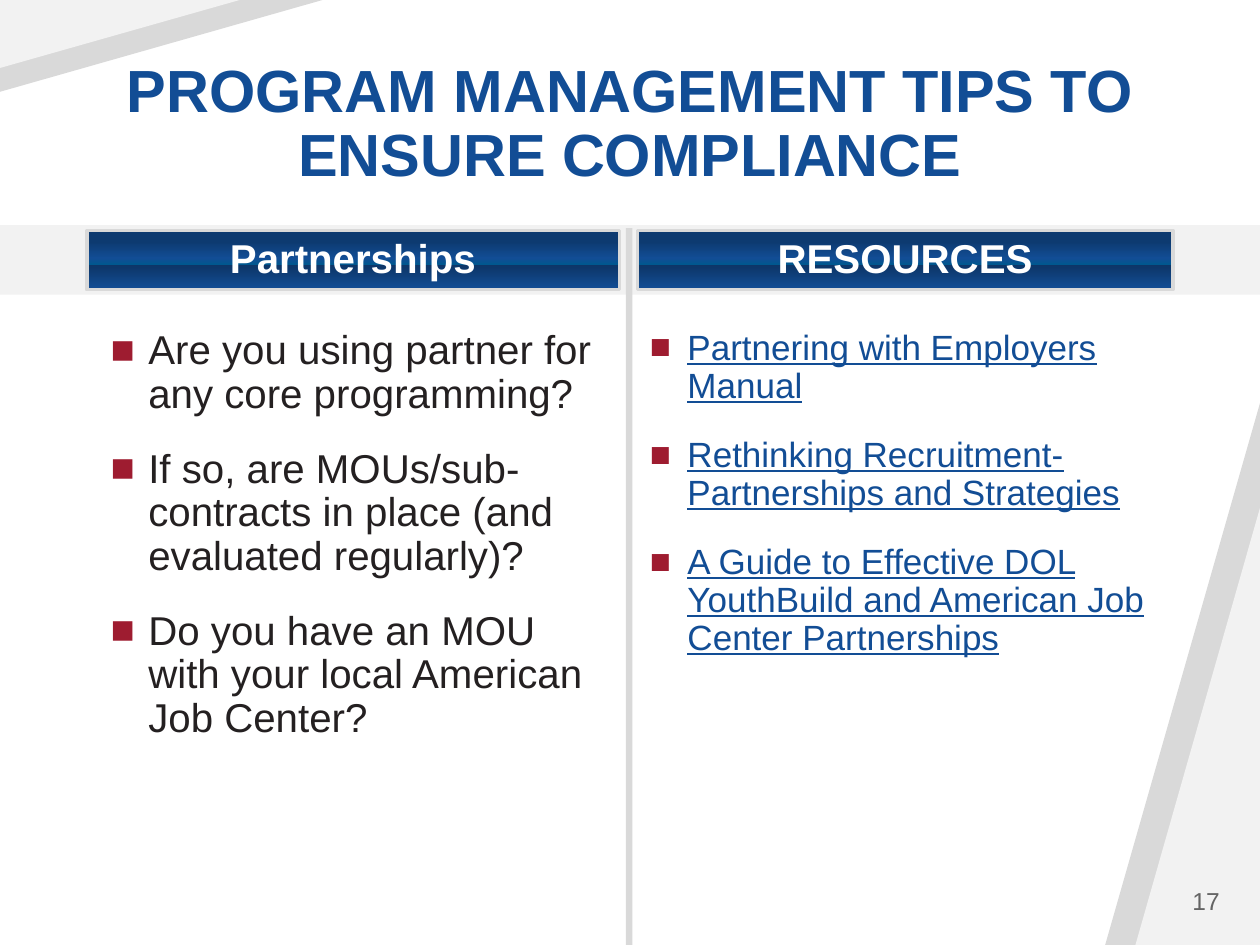
from dataclasses import dataclass

from lxml import etree
from pptx import Presentation
from pptx import util as u
from pptx.dml import color
from pptx.enum import shapes, text
from pptx.oxml import ns


@dataclass(frozen=True)
class Theme:
    """Colours, font and type sizes of the slide."""
    font: str = "Arial"
    pale: str = "F2F2F2"
    grey: str = "D9D9D9"
    white: str = "FFFFFF"
    ink: str = "242021"
    blue: str = "124D95"
    red: str = "9E1C30"
    number: str = "646464"
    bar: tuple = ((19, "0D3A70"), (47, "124D95"), (58, "00588F"),
                  (59, "0D3668"), (100, "124D95"))
    title_pt: int = 34
    body_pt: int = 23
    link_pt: int = 20
    number_pt: int = 14


T = Theme()
QUESTIONS = [
    "Are you using partner for any core programming?",
    "If so, are MOUs/sub-contracts in place (and evaluated regularly)?",
    "Do you have an MOU with your local American Job Center?",
]
RESOURCES = [
    "Partnering with Employers Manual",
    "Rethinking Recruitment- Partnerships and Strategies",
    "A Guide to Effective DOL YouthBuild and American Job Center Partnerships",
]


def rgb(value):
    """Turn a hex string into a colour."""
    return color.RGBColor.from_string(value)


def box(at):
    """Turn left, top, width and height in centimetres into lengths."""
    return [u.Cm(v) for v in at]


def apply_gradient(fill, element):
    """Give a fill the vertical bar gradient inside its owner element."""
    fill.gradient()
    fill.gradient_angle = 270
    stops = element.find(".//" + ns.qn("a:gsLst"))
    for old in list(stops):
        stops.remove(old)
    for pos, value in T.bar:
        gs = etree.SubElement(stops, ns.qn("a:gs"), pos=str(pos * 1000))
        etree.SubElement(gs, ns.qn("a:srgbClr"), val=value)


def add_block(s, kind, at, fill=None):
    """Add a borderless preset shape with an optional solid fill."""
    sp = s.shapes.add_shape(kind, *box(at))
    sp.shadow.inherit = False
    sp.line.fill.background()
    if fill:
        sp.fill.solid()
        sp.fill.fore_color.rgb = rgb(fill)
    return sp


def add_corner(s, at, fill, rotation=0):
    """Add a right-angled corner triangle."""
    sp = add_block(s, shapes.MSO_SHAPE.ISOSCELES_TRIANGLE, at, fill)
    sp.adjustments[0] = 1
    sp.rotation = rotation


def add_run(p, words, size, fill=None, bold=False, underline=False):
    """Add a styled run to a paragraph."""
    r = p.add_run()
    r.text = words
    r.font.name, r.font.size = T.font, u.Pt(size)
    r.font.bold, r.font.underline = bold, underline
    if fill:
        r.font.color.rgb = rgb(fill)
    return r


def add_text(s, at, anchor=text.MSO_ANCHOR.TOP):
    """Add a wrapping text box and return its frame."""
    tf = s.shapes.add_textbox(*box(at)).text_frame
    tf.word_wrap = True
    tf.vertical_anchor = anchor
    return tf


def add_title(s, at, words):
    """Add the centred slide title."""
    p = add_text(s, at, text.MSO_ANCHOR.BOTTOM).paragraphs[0]
    p.alignment, p.line_spacing = text.PP_ALIGN.CENTER, 0.9
    r = add_run(p, words, T.title_pt, bold=True)
    apply_gradient(r.font.fill, p._p)


def add_header(s, at, words):
    """Add a gradient column header."""
    sp = add_block(s, shapes.MSO_SHAPE.RECTANGLE, at)
    apply_gradient(sp.fill, sp._element)
    sp.line.color.rgb = rgb(T.grey)
    sp.line.width = u.Pt(2)
    tf = sp.text_frame
    tf.word_wrap = True
    tf.vertical_anchor = text.MSO_ANCHOR.MIDDLE
    tf.margin_left = tf.margin_right = u.Cm(0.13)
    tf.margin_top = tf.margin_bottom = u.Cm(0.15)
    p = tf.paragraphs[0]
    p.alignment, p.line_spacing = text.PP_ALIGN.CENTER, 0.9
    add_run(p, words, T.body_pt, T.white, bold=True)


def set_bullet(p):
    """Give a paragraph a hanging red square bullet."""
    indent = u.Cm(0.76)
    pPr = p._p.get_or_add_pPr()
    pPr.set("marL", str(indent))
    pPr.set("indent", str(-indent))
    clr = etree.SubElement(pPr, ns.qn("a:buClr"))
    etree.SubElement(clr, ns.qn("a:srgbClr"), val=T.red)
    etree.SubElement(pPr, ns.qn("a:buFont"), typeface=T.font)
    etree.SubElement(pPr, ns.qn("a:buChar"), char="■")


def add_bullets(s, at, items, size, fill, underline=False):
    """Add a bulleted list."""
    tf = add_text(s, at)
    for i, item in enumerate(items):
        p = tf.add_paragraph() if i else tf.paragraphs[0]
        set_bullet(p)
        p.line_spacing = 0.9
        if i:
            p.space_before = u.Pt(18)
        add_run(p, item, size, fill, underline=underline)


def add_number(s, at, words):
    """Add the slide number."""
    p = add_text(s, at, text.MSO_ANCHOR.MIDDLE).paragraphs[0]
    p.alignment = text.PP_ALIGN.RIGHT
    add_run(p, words, T.number_pt, T.number)


def add_backdrop(s):
    """Add the corner triangles, the header band and the column divider."""
    add_corner(s, (22.28, 8.13, 3.12, 10.92), T.grey)
    add_corner(s, (22.89, 10.24, 2.51, 8.81), T.pale)
    add_corner(s, (0, 0, 6.5, 1.85), T.grey, 180)
    add_corner(s, (0, 0, 4.83, 1.37), T.pale, 180)
    rect = shapes.MSO_SHAPE.RECTANGLE
    add_block(s, rect, (0, 4.54, 25.4, 1.4), T.pale)
    add_block(s, rect, (12.62, 4.6, 0.13, 14.45), T.grey)


def main():
    """Build and save the slide."""
    prs = Presentation()
    prs.slide_width, prs.slide_height = u.Cm(25.4), u.Cm(19.05)
    s = prs.slides.add_slide(prs.slide_layouts[6])
    add_backdrop(s)
    add_title(s, (1.75, 1.02, 21.9, 2.92),
              "PROGRAM MANAGEMENT TIPS TO ENSURE COMPLIANCE")
    add_header(s, (1.75, 4.65, 10.74, 1.19), "Partnerships")
    add_bullets(s, (1.98, 6.53, 10.41, 10.67), QUESTIONS, T.body_pt, T.ink)
    add_header(s, (12.85, 4.65, 10.8, 1.19), "RESOURCES")
    add_bullets(s, (12.85, 6.53, 10.64, 10.67), RESOURCES, T.link_pt, T.blue,
                underline=True)
    add_number(s, (22.76, 17.65, 2.08, 1.02), "17")
    prs.save("out.pptx")


if __name__ == "__main__":
    main()
